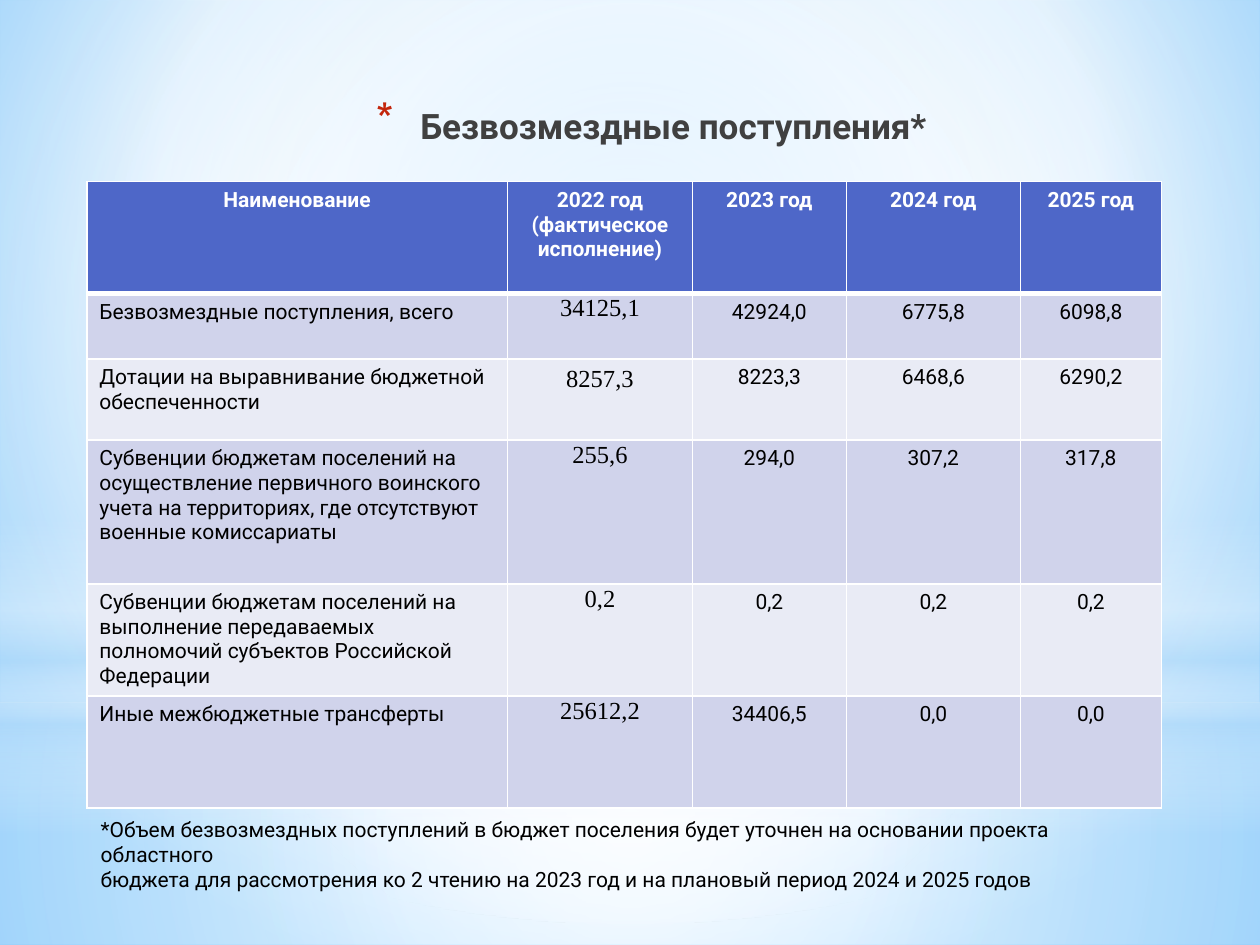
"""Build the slide on gratuitous receipts of the settlement budget."""
import pptx
import pptx.dml.color
import pptx.enum.shapes
import pptx.enum.text
import pptx.oxml
import pptx.oxml.ns
import pptx.util

Cm, Pt = pptx.util.Cm, pptx.util.Pt
SHAPE = pptx.enum.shapes.MSO_SHAPE
ALIGN = pptx.enum.text.PP_ALIGN
ANCHOR = pptx.enum.text.MSO_ANCHOR
NS = pptx.oxml.ns.nsdecls("a")

COLORS = {
    "white": "FFFFFF", "black": "000000", "title": "404040", "bullet": "C3260C",
    "header": "4E67C8", "odd": "D0D3EB", "even": "E9EBF5",
    "sky": "9ED5FF", "deep": "5BB9FF", "haze": "B4DCFA",
}
FORMATS = {
    "title": {"size": Pt(20), "name": "Roboto", "bold": True},
    "header": {"size": Pt(12), "name": "Roboto", "bold": True},
    "body": {"size": Pt(12), "name": "Roboto", "bold": False},
    "actual": {"size": Pt(14), "name": "Times New Roman", "bold": False},
}
TIGHT = {"margin_left": Cm(0.03), "margin_top": Cm(0.03),
         "margin_right": Cm(0.03), "margin_bottom": 0}
CENTER = (50, 50, 50, 50)

BACKDROP = [
    (SHAPE.RECTANGLE, (0, 14.17, 25.4, 4.88),
     [(0, "white", 91), (37, "white", 76), (100, "haze", 79)], CENTER),
    (SHAPE.RECTANGLE, (0, 0, 25.4, 14.17),
     [(0, "white", 89), (48, "white", 62), (100, "haze", 79)], CENTER),
    (SHAPE.RECTANGLE, (0, 10.46, 25.4, 6.35),
     [(0, "white", 0), (29, "white", 30), (45, "haze", 40), (55, "white", 26),
      (65, "haze", 60), (100, "white", 0)], None),
    (SHAPE.OVAL, (0, 4.45, 25.4, 14.17),
     [(0, "white", 100), (56, "white", 0)], CENTER),
]
RECEIPTS = [
    ("Наименование", "2022 год (фактическое исполнение)",
     "2023 год", "2024 год", "2025 год"),
    ("Безвозмездные поступления, всего", "34125,1", "42924,0", "6775,8", "6098,8"),
    ("Дотации на выравнивание бюджетной обеспеченности",
     "8257,3", "8223,3", "6468,6", "6290,2"),
    ("Субвенции бюджетам поселений на осуществление первичного воинского учета "
     "на территориях, где отсутствуют военные комиссариаты",
     "255,6", "294,0", "307,2", "317,8"),
    ("Субвенции бюджетам поселений на выполнение передаваемых полномочий "
     "субъектов Российской Федерации", "0,2", "0,2", "0,2", "0,2"),
    ("Иные межбюджетные трансферты", "25612,2", "34406,5", "0,0", "0,0"),
]
COLUMN_WIDTHS = (8.48, 3.73, 3.1, 3.51, 2.84)
ROW_HEIGHTS = (2.26, 1.32, 1.63, 2.9, 2.26, 2.26)
FOOTNOTE = [
    "*Объем безвозмездных поступлений в бюджет поселения будет уточнен "
    "на основании проекта областного",
    "бюджета для рассмотрения ко 2 чтению на 2023 год "
    "и на плановый период 2024 и 2025 годов",
]


class ReceiptsSlide:
    """Hold the slide and its style, and add each kind of element."""

    def __init__(self, presentation):
        """Start a slide that has only a title."""
        self.slide = presentation.slides.add_slide(presentation.slide_layouts[5])
        self.shapes = self.slide.shapes

    def rgb(self, color):
        """Return the named colour."""
        return pptx.dml.color.RGBColor.from_string(COLORS[color])

    def assign(self, target, values):
        """Set attributes from a dict."""
        for name, value in values.items():
            setattr(target, name, value)

    def gradient(self, fill_parent, stops, focus):
        """Replace the solid fill by a circular or vertical gradient."""
        marks = "".join(
            f'<a:gs pos="{position * 1000}"><a:srgbClr val="{COLORS[color]}">'
            f'<a:alpha val="{opacity * 1000}"/></a:srgbClr></a:gs>'
            for position, color, opacity in stops)
        direction = '<a:lin ang="5400000" scaled="0"/>'
        if focus:
            edges = " ".join(f'{side}="{value * 1000}"' for side, value in zip("ltrb", focus))
            direction = f'<a:path path="circle"><a:fillToRect {edges}/></a:path>'
        solid = fill_parent.find(pptx.oxml.ns.qn("a:solidFill"))
        fill_parent.replace(solid, pptx.oxml.parse_xml(
            f'<a:gradFill {NS} rotWithShape="1"><a:gsLst>{marks}</a:gsLst>'
            f'{direction}</a:gradFill>'))

    def background(self, stops, focus):
        """Fill the slide background."""
        self.slide.background.fill.solid()
        self.gradient(self.slide.element.find(".//" + pptx.oxml.ns.qn("p:bgPr")), stops, focus)

    def glow(self, kind, box, stops, focus):
        """Add a borderless gradient shape."""
        shape = self.shapes.add_shape(kind, *map(Cm, box))
        shape.shadow.inherit = False
        shape.line.fill.background()
        shape.fill.solid()
        self.gradient(shape.element.spPr, stops, focus)

    def add_text(self, paragraph, text, style, color, alignment):
        """Put one formatted run in a paragraph."""
        paragraph.alignment = alignment
        run = paragraph.add_run()
        run.text = text
        self.assign(run.font, FORMATS[style])
        run.font.color.rgb = self.rgb(color)

    def title(self, text, box):
        """Place the title with its asterisk bullet in front of the backdrop."""
        heading = self.shapes.title
        self.assign(heading, dict(zip(("left", "top", "width", "height"), map(Cm, box))))
        heading.text_frame.vertical_anchor = ANCHOR.MIDDLE
        paragraph = heading.text_frame.paragraphs[0]
        self.add_text(paragraph, text, "title", "title", ALIGN.CENTER)
        properties = paragraph._p.get_or_add_pPr()
        properties.set("marL", str(Cm(0.89)))
        properties.set("indent", str(-Cm(0.89)))
        for bullet in (f'<a:buClr {NS}><a:srgbClr val="{COLORS["bullet"]}"/></a:buClr>',
                       f'<a:buSzPct {NS} val="128000"/>', f'<a:buChar {NS} char="*"/>'):
            properties.append(pptx.oxml.parse_xml(bullet))
        self.shapes.element.append(heading.element)

    def borders(self, cell, row):
        """Draw white cell borders, thicker under the header."""
        widths = {"L": 1, "R": 1, "T": 3 if row == 1 else 1, "B": 3 if row == 0 else 1}
        for side, width in widths.items():
            cell._tc.get_or_add_tcPr().append(pptx.oxml.parse_xml(
                f'<a:ln{side} {NS} w="{Pt(width)}"><a:solidFill>'
                f'<a:srgbClr val="{COLORS["white"]}"/></a:solidFill></a:ln{side}>'))

    def table(self, rows, left, top):
        """Add the table of receipts."""
        table = self.shapes.add_table(
            len(rows), len(COLUMN_WIDTHS), Cm(left), Cm(top),
            Cm(sum(COLUMN_WIDTHS)), Cm(sum(ROW_HEIGHTS))).table
        for column, width in zip(table.columns, COLUMN_WIDTHS):
            column.width = Cm(width)
        for r, (values, height) in enumerate(zip(rows, ROW_HEIGHTS)):
            table.rows[r].height = Cm(height)
            band = "header" if r == 0 else "odd" if r % 2 else "even"
            for c, value in enumerate(values):
                cell = table.cell(r, c)
                self.borders(cell, r)
                cell.fill.solid()
                cell.fill.fore_color.rgb = self.rgb(band)
                style = "header" if r == 0 else "actual" if c == 1 else "body"
                if style == "actual" and r != 2:
                    self.assign(cell, TIGHT)
                self.add_text(cell.text_frame.paragraphs[0], value, style,
                              "black" if r else "white",
                              ALIGN.LEFT if r and c == 0 else ALIGN.CENTER)

    def note(self, lines, box):
        """Add a text box with one paragraph for each line."""
        frame = self.shapes.add_textbox(*map(Cm, box)).text_frame
        self.assign(frame, {"word_wrap": True,
                            "auto_size": pptx.enum.text.MSO_AUTO_SIZE.SHAPE_TO_FIT_TEXT})
        for index, line in enumerate(lines):
            paragraph = frame.add_paragraph() if index else frame.paragraphs[0]
            self.add_text(paragraph, line, "body", "black", ALIGN.LEFT)


def main():
    """Build and save the presentation."""
    presentation = pptx.Presentation()
    presentation.slide_width, presentation.slide_height = Cm(25.4), Cm(19.05)
    receipts = ReceiptsSlide(presentation)
    receipts.background([(0, "sky", 100), (60, "white", 100), (100, "deep", 100)],
                        (20, 10, 20, 60))
    for glow in BACKDROP:
        receipts.glow(*glow)
    receipts.title("Безвозмездные поступления*", (3.71, 1.93, 18.85, 1.19))
    receipts.table(RECEIPTS, 1.75, 3.66)
    receipts.note(FOOTNOTE, (1.78, 16.33, 21.99, 1.27))
    presentation.save("out.pptx")


if __name__ == "__main__":
    main()
